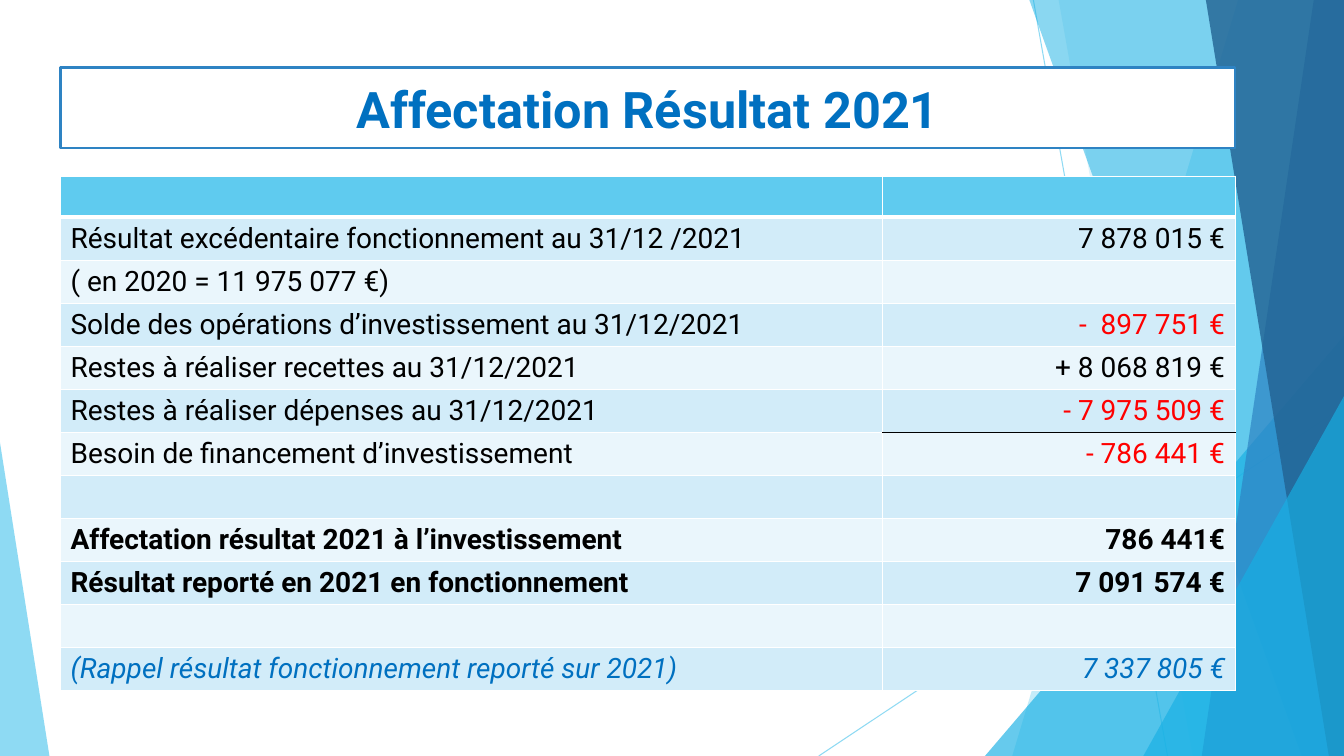
from lxml import etree
from pptx import Presentation, util as u
from pptx.dml.color import RGBColor
from pptx.enum import shapes, text
from pptx.oxml.ns import qn


class Theme:
    font = "Roboto"
    head, body = 36, 20
    white, black, red, link = "FFFFFF", "000000", "FF0000", "0070C0"
    sky, cyan, blue, navy = "5FCBEF", "17B0E4", "2E83C3", "226292"
    bands = "D2ECF9", "EAF6FC"


W, H = u.Inches(13.33), u.Inches(7.5)
PAGE = 0, 0, W, H

RAYS = [((76.89, 0), (86.87, 100)), ((100, 53.73), (60.92, 100))]
BACK = [
    ("panel", 92.12, 75.32, Theme.sky, 36),
    ("panel", 78.77, 88.75, Theme.sky, 20),
    ("wedge", 73.29, 44.4, Theme.cyan, 66),
    ("panel", 76.59, 96.85, Theme.cyan, 50),
    ("panel", 97.75, 89.42, Theme.blue, 70),
    ("panel", 89.72, 98.87, Theme.navy, 80),
    ("wedge", 85.07, 52.4, Theme.cyan, 66),
]
PLAIN = {"color": Theme.black}
MINUS = {"color": Theme.red}
BOLD = {"color": Theme.black, "bold": True}
NOTE = {"color": Theme.link, "italic": True}
ROWS = [
    ("", "", PLAIN, PLAIN),
    ("Résultat excédentaire fonctionnement au 31/12 /2021", "7 878 015 €", PLAIN, PLAIN),
    ("( en 2020 = 11 975 077 €)", "", PLAIN, PLAIN),
    ("Solde des opérations d’investissement au 31/12/2021", "-  897 751 €", PLAIN, MINUS),
    ("Restes à réaliser recettes au 31/12/2021", "+ 8 068 819 €", PLAIN, PLAIN),
    ("Restes à réaliser dépenses au 31/12/2021", "- 7 975 509 €", PLAIN, MINUS),
    ("Besoin de financement d’investissement", "- 786 441 €", PLAIN, MINUS),
    ("", "", PLAIN, PLAIN),
    ("Affectation résultat 2021 à l’investissement", "786 441€", BOLD, BOLD),
    ("Résultat reporté en 2021 en fonctionnement", "7 091 574 €", BOLD, BOLD),
    ("", "", PLAIN, PLAIN),
    ("(Rappel résultat fonctionnement reporté sur 2021)", "7 337 805 €", NOTE, NOTE),
]
SUM = 5


def area(box, left, top, wide, high):
    x, y, w, h = box
    return [int(n) for n in (x + w * left / 100, y + h * top / 100, w * wide / 100, h * high / 100)]


def fade(fill, color, alpha=100):
    fill.solid()
    fill.fore_color.rgb = RGBColor.from_string(color)
    if alpha < 100:
        tint = fill._xPr.find(qn("a:solidFill"))[0]
        etree.SubElement(tint, qn("a:alpha"), val=str(alpha * 1000))


def paint(shape, color, alpha=100):
    shape.shadow.inherit = False
    fade(shape.fill, color, alpha)
    shape.line.fill.background()


def write(para, words, align, size, color, **style):
    para.alignment = align
    run = para.add_run()
    run.text = words
    run.font.color.rgb = RGBColor.from_string(color)
    for key, val in {"name": Theme.font, "size": u.Pt(size), **style}.items():
        setattr(run.font, key, val)


def wedge(slide, box, lean, color, alpha):
    shape = slide.shapes.add_shape(shapes.MSO_SHAPE.ISOSCELES_TRIANGLE, *box)
    shape.adjustments[0] = lean
    paint(shape, color, alpha)


def panel(slide, box, top, foot, color, alpha):
    x, y, w, h = box
    path = [(x + w * a / 100, y + h * b / 100)
            for a, b in ((top, 0), (100, 0), (100, 100), (foot, 100))]
    form = slide.shapes.build_freeform(*path[0])
    form.add_line_segments(path[1:], close=True)
    paint(form.convert_to_shape(), color, alpha)


def backdrop(slide, box):
    for start, end in RAYS:
        ends = [n for spot in (start, end) for n in area(box, *spot, 0, 0)[:2]]
        ray = slide.shapes.add_connector(shapes.MSO_CONNECTOR.STRAIGHT, *ends)
        ray.line.width = u.Pt(0.75)
        fade(ray.line.fill, Theme.sky, 70)
        etree.SubElement(ray._element.spPr, qn("a:effectLst"))
    for kind, one, two, color, alpha in BACK:
        if kind == "panel":
            panel(slide, box, one, two, color, alpha)
        else:
            wedge(slide, area(box, one, two, 100 - one, 100 - two), 1, color, alpha)
    wedge(slide, area(box, 0, 58.53, 3.68, 41.47), 0, Theme.sky, 70)


def title(slide, box):
    shape = slide.shapes.add_shape(shapes.MSO_SHAPE.RECTANGLE, *box)
    paint(shape, Theme.white)
    fade(shape.line.fill, Theme.blue)
    shape.line.width = u.Pt(1.5)
    frame = shape.text_frame
    frame.word_wrap = True
    frame.vertical_anchor = text.MSO_ANCHOR.MIDDLE
    write(frame.paragraphs[0], "Affectation Résultat 2021", text.PP_ALIGN.CENTER,
          Theme.head, Theme.link, bold=True)


def edges(cell, **sides):
    props = cell._tc.get_or_add_tcPr()
    for spot, side in enumerate("LRTB"):
        color, width = sides.get(side, (Theme.white, 1))
        line = etree.Element(qn(f"a:ln{side}"), w=str(u.Pt(width)))
        fill = etree.SubElement(line, qn("a:solidFill"))
        etree.SubElement(fill, qn("a:srgbClr"), val=color)
        props.insert(spot, line)


def ledger(slide, box):
    x, y, w, h = box
    table = slide.shapes.add_table(len(ROWS), 2, *box).table
    for col, share in zip(table.columns, (0.7, 0.3)):
        col.width = int(w * share)
    head = int(h * 0.08)
    thick, rule = (Theme.white, 3), (Theme.black, 1)
    for r, (label, value, *styles) in enumerate(ROWS):
        table.rows[r].height = head if r == 0 else (h - head) // (len(ROWS) - 1)
        for c, words in enumerate((label, value)):
            cell = table.cell(r, c)
            fade(cell.fill, Theme.bands[(r - 1) % 2] if r else Theme.sky)
            sides = {0: {"B": thick}, 1: {"T": thick}}.get(r, {})
            if c == 1:
                sides = {SUM: {"B": rule}, SUM + 1: {"T": rule}}.get(r, sides)
            edges(cell, **sides)
            if words:
                align = text.PP_ALIGN.RIGHT if c else text.PP_ALIGN.LEFT
                write(cell.text_frame.paragraphs[0], words, align, Theme.body, **styles[c])


def main():
    deck = Presentation()
    deck.slide_width, deck.slide_height = W, H
    slide = deck.slides.add_slide(deck.slide_layouts[6])
    backdrop(slide, PAGE)
    title(slide, area(PAGE, 4.5, 8.93, 87.4, 10.67))
    ledger(slide, area(PAGE, 4.5, 23.3, 87.4, 68))
    deck.save("out.pptx")


if __name__ == "__main__":
    main()
